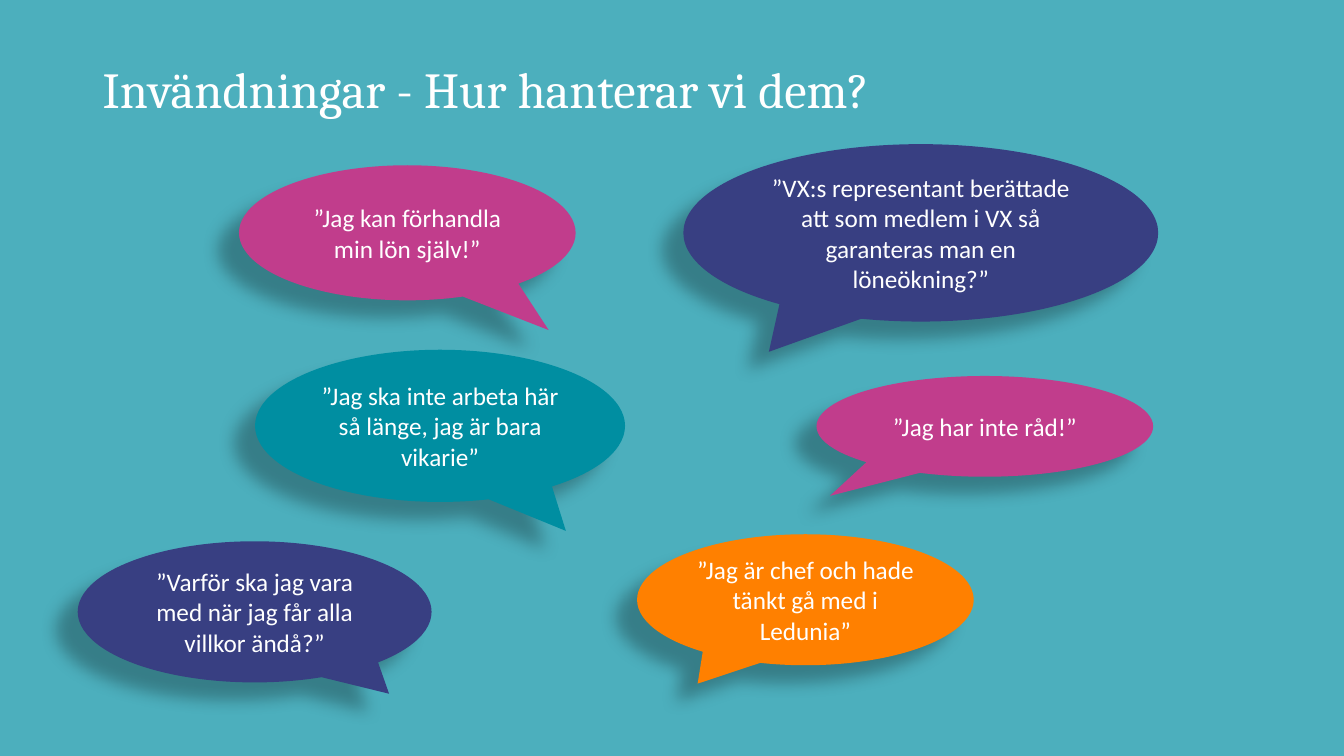
"""Build a slide of speech bubbles with common objections."""
from lxml import etree
from pptx import Presentation
from pptx.dml.color import RGBColor
from pptx.enum.shapes import MSO_SHAPE
from pptx.enum.text import MSO_ANCHOR, PP_ALIGN
from pptx.oxml.ns import qn
from pptx.util import Inches, Pt

RECTANGLE = MSO_SHAPE.RECTANGLE
CALLOUT = MSO_SHAPE.OVAL_CALLOUT
MIDDLE = MSO_ANCHOR.MIDDLE
LEFT = PP_ALIGN.LEFT
CENTER = PP_ALIGN.CENTER

WHITE = RGBColor(0xFF, 0xFF, 0xFF)
TEAL = RGBColor(0x00, 0x8E, 0xA1)
PINK = RGBColor(0xC1, 0x3D, 0x8C)
INDIGO = RGBColor(0x38, 0x3F, 0x82)
ORANGE = RGBColor(0xFF, 0x80, 0x00)

SLIDE_WIDTH = Inches(13.33)
SLIDE_HEIGHT = Inches(7.5)

# Each bubble: quote, fill, place in percent of the slide, tip of the tail.
BUBBLES = [
    ("”Jag kan förhandla min lön själv!”",
     PINK, (17.78, 21.87, 25.05, 17.87), (0.42, 0.72)),
    ("”Jag ska inte arbeta här så länge, jag är bara vikarie”",
     TEAL, (18.98, 46.27, 27.53, 20.13), (0.34, 0.69)),
    ("”Varför ska jag vara med när jag får alla villkor ändå?”",
     INDIGO, (5.78, 71.6, 26.33, 18.67), (0.38, 0.58)),
    ("”Jag har inte råd!”",
     PINK, (60.75, 49.73, 25.05, 13.33), (-0.46, 0.69)),
    ("”VX:s representant berättade att som medlem i VX så "
     "garanteras man en löneökning?”",
     INDIGO, (50.85, 19.07, 35.33, 23.47), (-0.32, 0.67)),
    ("”Jag är chef och hade tänkt gå med i Ledunia”",
     ORANGE, (47.4, 70.67, 25.05, 17.33), (-0.32, 0.64)),
]


def place(left, top, width, height):
    """Turn percentages of the slide into lengths."""
    return (int(SLIDE_WIDTH * left / 100), int(SLIDE_HEIGHT * top / 100),
            int(SLIDE_WIDTH * width / 100), int(SLIDE_HEIGHT * height / 100))


def write(shape, text, *, font="Calibri", size=18, align=CENTER, spacing=1.0):
    """Write one white paragraph in the middle of a shape."""
    frame = shape.text_frame
    frame.word_wrap = True
    frame.vertical_anchor = MIDDLE
    para = frame.paragraphs[0]
    para.alignment = align
    para.line_spacing = spacing
    span = para.add_run()
    span.text = text
    span.font.name = font
    span.font.size = Pt(size)
    span.font.color.rgb = WHITE


def add_filled(page, kind, share, color):
    """Add a preset shape with a plain fill and no outline."""
    shape = page.shapes.add_shape(kind, *place(*share))
    shape.shadow.inherit = False
    shape.fill.solid()
    shape.fill.fore_color.rgb = color
    shape.line.fill.background()
    return shape


def add_alpha(color_element, percent):
    """Make a colour partly transparent."""
    alpha = etree.SubElement(color_element, qn("a:alpha"))
    alpha.set("val", str(percent * 1000))


def add_shadow(shape):
    """Cast a soft shadow down and to the left."""
    effects = shape._element.spPr.find(qn("a:effectLst"))
    shadow = etree.SubElement(
        effects, qn("a:outerShdw"), blurRad=str(Pt(11.8)), dist=str(Pt(19.7)),
        dir=str(141 * 60000), algn="ctr", rotWithShape="0")
    color = etree.SubElement(shadow, qn("a:srgbClr"), val="000000")
    add_alpha(color, 28)


def add_backdrop(page):
    """Cover the page with translucent teal."""
    backdrop = add_filled(page, RECTANGLE, (0, 0, 100, 100), TEAL)
    add_alpha(backdrop._element.spPr.find(".//" + qn("a:srgbClr")), 70)


def add_title(page, text):
    """Add the heading."""
    box = page.shapes.add_textbox(*place(6.9, 5.33, 86.25, 13.73))
    write(box, text, font="Cambria", size=36, align=LEFT, spacing=0.9)


def add_bubble(page, quote, color, share, tip):
    """Add a speech bubble with its tail and shadow."""
    bubble = add_filled(page, CALLOUT, share, color)
    bubble.adjustments[0], bubble.adjustments[1] = tip
    add_shadow(bubble)
    write(bubble, quote)


def main():
    """Build and save the deck."""
    deck = Presentation()
    deck.slide_width = SLIDE_WIDTH
    deck.slide_height = SLIDE_HEIGHT
    page = deck.slides.add_slide(deck.slide_layouts[6])
    add_backdrop(page)
    add_title(page, "Invändningar - Hur hanterar vi dem?")
    for bubble in BUBBLES:
        add_bubble(page, *bubble)
    deck.save("out.pptx")


if __name__ == "__main__":
    main()
